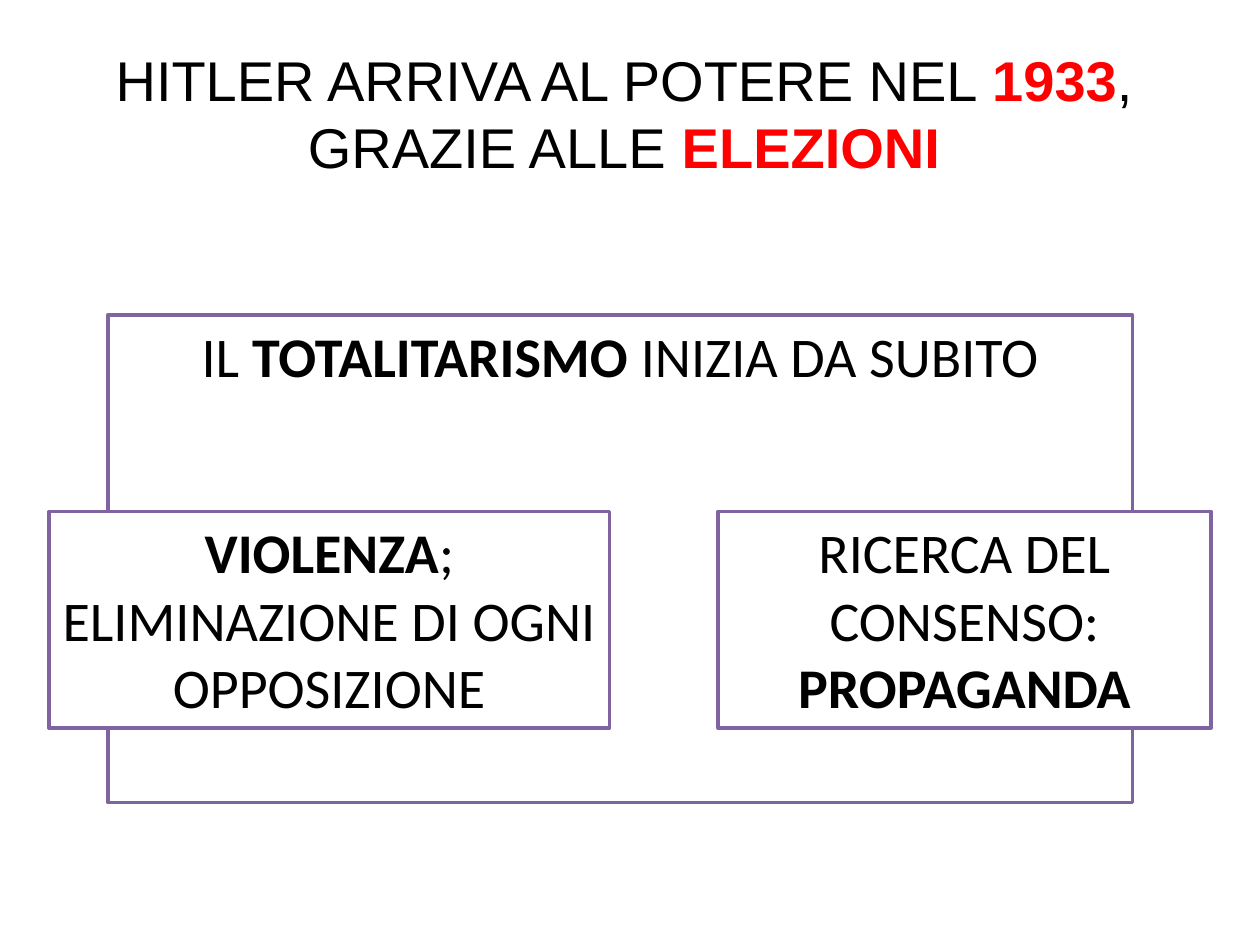
from dataclasses import dataclass

from pptx import Presentation
from pptx.dml.color import RGBColor
from pptx.enum.shapes import MSO_SHAPE
from pptx.enum.text import MSO_ANCHOR, MSO_AUTO_SIZE, PP_ALIGN
from pptx.util import Cm, Pt

RECT = MSO_SHAPE.RECTANGLE
TOP = MSO_ANCHOR.TOP
FIXED = MSO_AUTO_SIZE.NONE
CENTER = PP_ALIGN.CENTER

BLACK, WHITE, RED, PURPLE = "000000", "FFFFFF", "FF0000", "8064A2"
SIZE = 32


@dataclass
class Part:
    text: str
    bold: bool = False
    color: str = BLACK


@dataclass
class Box:
    left: float
    top: float
    width: float
    height: float
    lines: list[list[Part]]


def paint(code: str) -> RGBColor:
    return RGBColor.from_string(code)


def place(shape, box: Box) -> None:
    shape.left, shape.top = Cm(box.left), Cm(box.top)
    shape.width, shape.height = Cm(box.width), Cm(box.height)


def write(frame, lines: list[list[Part]], font: str) -> None:
    frame.word_wrap = True
    frame.auto_size = FIXED
    frame.vertical_anchor = TOP
    frame.margin_left = frame.margin_right = Cm(0.25)
    frame.margin_top = frame.margin_bottom = Cm(0.13)
    frame.text = "\n".join("" for _ in lines)
    for para, parts in zip(frame.paragraphs, lines):
        para.alignment = CENTER
        para.space_before = Pt(0)
        for part in parts:
            run = para.add_run()
            run.text = part.text
            run.font.name = font
            run.font.size = Pt(SIZE)
            run.font.bold = part.bold
            run.font.color.rgb = paint(part.color)


def draw(slide, box: Box) -> None:
    shape = slide.shapes.add_shape(RECT, 0, 0, 0, 0)
    place(shape, box)
    shape.shadow.inherit = False
    shape.fill.solid()
    shape.fill.fore_color.rgb = paint(WHITE)
    shape.line.color.rgb = paint(PURPLE)
    shape.line.width = Pt(2)
    write(shape.text_frame, box.lines, "Calibri")


HEAD = Box(1.57, 0.79, 22.02, 3, [[
    Part("HITLER ARRIVA AL POTERE NEL "), Part("1933", True, RED),
    Part(", GRAZIE ALLE "), Part("ELEZIONI", True, RED),
]])

# The frame comes first, so the two means of power lie over its sides
ROW, TALL = 10.31, 4.37
BOXES = [
    Box(2.18, 6.35, 20.65, 9.83, [[
        Part("IL "), Part("TOTALITARISMO", True), Part(" INIZIA DA SUBITO"),
    ]]),
    Box(0.99, ROW, 11.3, TALL, [
        [Part("VIOLENZA", True), Part(";")],
        [Part("ELIMINAZIONE DI OGNI OPPOSIZIONE")],
    ]),
    Box(14.48, ROW, 9.93, TALL, [
        [Part("RICERCA DEL CONSENSO:")],
        [Part("PROPAGANDA", True)],
    ]),
]


def main() -> None:
    deck = Presentation()
    deck.slide_width, deck.slide_height = Cm(25.4), Cm(19.05)
    slide = deck.slides.add_slide(deck.slide_layouts[5])

    # Title
    title = slide.shapes.title
    place(title, HEAD)
    write(title.text_frame, HEAD.lines, "Arial")

    # Frame and boxes
    for box in BOXES:
        draw(slide, box)

    deck.save("out.pptx")


if __name__ == "__main__":
    main()
